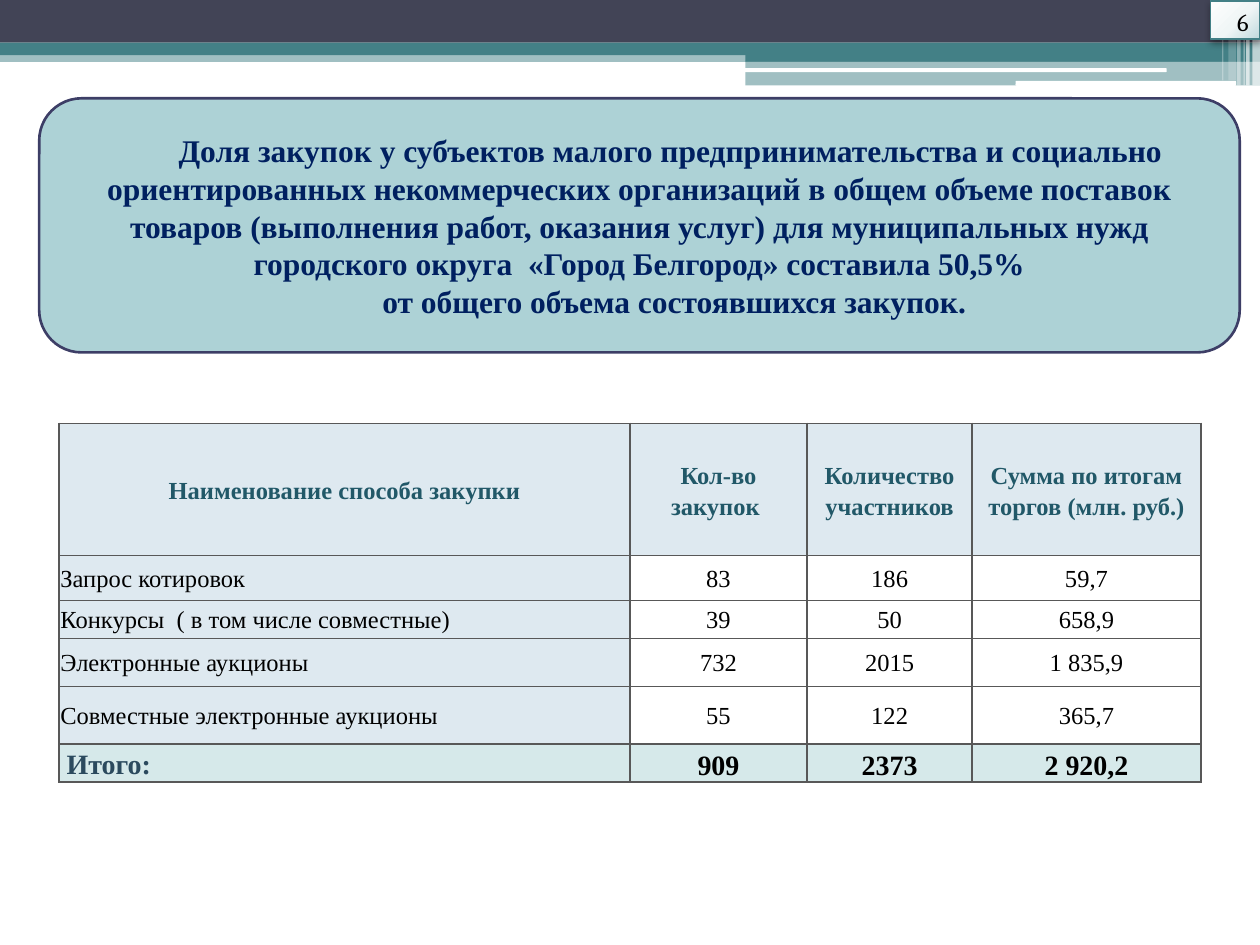
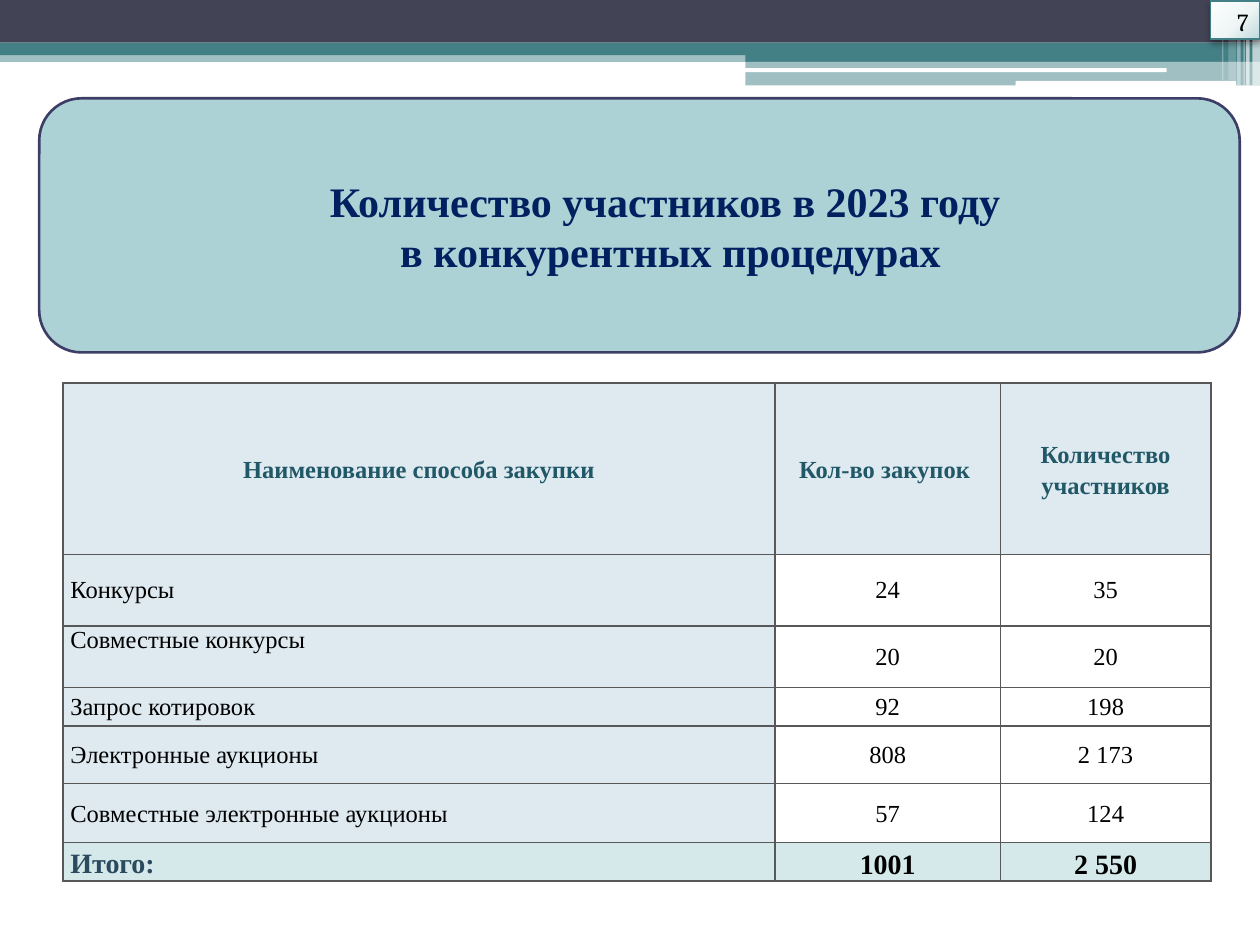
from dataclasses import dataclass, replace

from pptx import Presentation
from pptx.dml.color import RGBColor
from pptx.enum.shapes import MSO_SHAPE, PP_PLACEHOLDER
from pptx.enum.text import MSO_ANCHOR, MSO_AUTO_SIZE, PP_ALIGN
from pptx.oxml import parse_xml
from pptx.oxml.ns import nsdecls
from pptx.shapes.autoshape import Shape
from pptx.slide import Slide, SlideLayout
from pptx.table import _Cell
from pptx.text.text import _Paragraph
from pptx.util import Pt

COLOURS = {
    "dark": "424456",
    "teal": "438086",
    "white": "FFFFFF",
    "panel": "ADD2D6",
    "panel line": "3D3E66",
    "title": "002060",
    "heading": "215868",
    "total label": "2B4A5E",
    "black": "000000",
    "cell": "DEE9F0",
    "total": "D6E9EA",
    "border": "585858",
    "badge start": "FEFEFE",
    "badge middle": "F0F6F6",
    "badge end": "BFD9DD",
}
BODY_FONT = "Times New Roman"
NUMBER_FONT = "Cambria"


@dataclass(frozen=True)
class Box:
    left: float
    top: float
    width: float
    height: float

    def lengths(self) -> tuple[Pt, Pt, Pt, Pt]:
        return Pt(self.left), Pt(self.top), Pt(self.width), Pt(self.height)


@dataclass(frozen=True)
class Band:
    box: Box
    colour: str
    opacity: int = 100
    rounded: bool = False


@dataclass(frozen=True)
class CellStyle:
    colour: str = "black"
    size: float = 14
    bold: bool = False
    fill: str | None = None
    align: PP_ALIGN = PP_ALIGN.CENTER
    anchor: MSO_ANCHOR = MSO_ANCHOR.MIDDLE
    side_margin: float = 0.72
    top_margin: float = 0.72
    line_spacing: float | None = None


@dataclass(frozen=True)
class TableRow:
    height: float
    texts: tuple[str, ...]
    label_style: CellStyle
    value_style: CellStyle


@dataclass(frozen=True)
class PurchaseSlide:
    number: int
    title_lines: tuple[str, ...]
    title_size: float
    table_left: float
    table_top: float
    column_widths: tuple[float, ...]
    rows: tuple[TableRow, ...]


PANEL = Box(22.4, 56.2, 686, 145.2)
BADGE = Box(691.9, 0.5, 28.1, 21.8)

BANDS = (
    Band(Box(0, 28.8, 720, 6.6), "teal", 50),
    Band(Box(0, 0, 720, 24.4), "dark"),
    Band(Box(0, 24.4, 720, 7.2), "teal"),
    Band(Box(426, 28, 294, 7.2), "teal"),
    Band(Box(426, 34.6, 294, 14.2), "teal", 50),
    Band(Box(425.5, 39, 241.2, 2.2), "white", rounded=True),
    Band(Box(580.3, 46.2, 126, 2.8), "white", rounded=True),
    Band(Box(715.7, 0, 4.3, 48.8), "white", 65),
    Band(Box(712.1, 0, 2, 48.8), "white", 65),
    Band(Box(710.6, 0, 0.7, 48.8), "white", 60),
    Band(Box(707, 0, 2, 48.8), "white", 40),
    Band(Box(702, 0, 4.3, 46), "white", 20),
    Band(Box(698.4, 0, 0.7, 46), "white", 30),
)

HEADER = CellStyle("heading", bold=True, fill="cell", side_margin=4.3,
                   top_margin=0, line_spacing=1.15)
VALUE = CellStyle()
LABEL = CellStyle(fill="cell", align=PP_ALIGN.LEFT)
TOP_LABEL = replace(LABEL, anchor=MSO_ANCHOR.TOP)
TOTAL_LABEL = replace(HEADER, colour="total label", size=16, fill="total",
                      align=PP_ALIGN.LEFT)
TOTAL_VALUE = CellStyle(size=16, bold=True, fill="total",
                        anchor=MSO_ANCHOR.BOTTOM)


def header_row(height: float, *texts: str) -> TableRow:
    return TableRow(height, texts, HEADER, HEADER)


def body_row(height: float, *texts: str,
             label_style: CellStyle = LABEL) -> TableRow:
    return TableRow(height, texts, label_style, VALUE)


def total_row(height: float, *texts: str) -> TableRow:
    return TableRow(height, texts, TOTAL_LABEL, TOTAL_VALUE)


SLIDES = (
    PurchaseSlide(
        6,
        (
            "Доля закупок у субъектов малого предпринимательства и социально "
            "ориентированных некоммерческих организаций в общем объеме "
            "поставок товаров (выполнения работ, оказания услуг) для "
            "муниципальных нужд городского округа  «Город Белгород» "
            "составила 50,5%",
            " от общего объема состоявшихся закупок.",
        ),
        18, 33.8, 241.9, (326.2, 101.2, 94.4, 130.6),
        (
            header_row(75.6, "Наименование способа закупки", "Кол-во закупок ",
                       "Количество участников",
                       "Сумма по итогам торгов (млн. руб.)"),
            body_row(25.8, "Запрос котировок", "83", "186", "59,7"),
            body_row(21.5, "Конкурсы  ( в том числе совместные)",
                     "39", "50", "658,9"),
            body_row(27.6, "Электронные аукционы", "732", "2015", "1 835,9"),
            body_row(32.8, "Совместные электронные аукционы",
                     "55", "122", "365,7"),
            total_row(21.6, "Итого:", "909", "2373", "2 920,2"),
        ),
    ),
    PurchaseSlide(
        7,
        ("Количество участников в 2023 году ", "в конкурентных процедурах"),
        24, 36, 218.8, (406.8, 128.9, 120.2),
        (
            header_row(98, "Наименование способа закупки", "Кол-во закупок ",
                       "Количество участников"),
            body_row(40.8, " Конкурсы", "24", "35"),
            body_row(35.2, " Совместные конкурсы", "20", "20",
                     label_style=TOP_LABEL),
            body_row(22.2, " Запрос котировок", "92", "198"),
            body_row(32.9, " Электронные аукционы", "808", "2 173"),
            body_row(33.6, " Совместные электронные аукционы", "57", "124"),
            total_row(22, "Итого:", "1001", "2 550"),
        ),
    ),
)


def rgb(name: str) -> RGBColor:
    return RGBColor.from_string(COLOURS[name])


def add_run(paragraph: _Paragraph, text: str, size: float, colour: str,
            bold: bool = False, font_name: str = BODY_FONT) -> None:
    run = paragraph.add_run()
    run.text = text
    run.font.name = font_name
    run.font.size = Pt(size)
    run.font.bold = bold
    run.font.color.rgb = rgb(colour)


def add_band(slide: Slide, band: Band) -> Shape:
    kind = MSO_SHAPE.ROUNDED_RECTANGLE if band.rounded else MSO_SHAPE.RECTANGLE
    shape = slide.shapes.add_shape(kind, *band.box.lengths())
    shape.shadow.inherit = False
    shape.fill.solid()
    shape.fill.fore_color.rgb = rgb(band.colour)
    shape.line.fill.background()
    if band.opacity < 100:
        colour = shape.element.spPr.find(".//{*}solidFill/{*}srgbClr")
        colour.append(parse_xml(
            f'<a:alpha {nsdecls("a")} val="{band.opacity * 1000}"/>'))
    return shape


def furnish_layout(layout: SlideLayout, slide: Slide) -> None:
    """Draw the shared bands and title panel, then move them to the layout."""
    for placeholder in list(layout.placeholders):
        if placeholder.placeholder_format.type != PP_PLACEHOLDER.TITLE:
            layout.shapes.element.remove(placeholder.element)
    shapes = [add_band(slide, band) for band in BANDS]
    panel = add_band(slide, Band(PANEL, "panel", rounded=True))
    panel.line.color.rgb = rgb("panel line")
    panel.line.width = Pt(1.5)
    for position, shape in enumerate(shapes + [panel], start=2):
        layout.shapes.element.insert(position, shape.element)


def set_title(slide: Slide, lines: tuple[str, ...], size: float) -> None:
    title = slide.shapes.title
    title.left, title.top, title.width, title.height = PANEL.lengths()
    frame = title.text_frame
    frame.word_wrap = True
    frame.auto_size = MSO_AUTO_SIZE.NONE
    frame.vertical_anchor = MSO_ANCHOR.MIDDLE
    frame.margin_left = frame.margin_right = Pt(14.4)
    for index, line in enumerate(lines):
        paragraph = frame.add_paragraph() if index else frame.paragraphs[0]
        paragraph.alignment = PP_ALIGN.CENTER
        properties = paragraph._p.get_or_add_pPr()
        properties.set("marL", "0")
        properties.set("indent", str(Pt(35.4)))
        add_run(paragraph, line, size, "title", bold=True)


def add_number_badge(slide: Slide, number: int) -> None:
    badge = slide.shapes.add_shape(MSO_SHAPE.RECTANGLE, *BADGE.lengths())
    stops = "".join(
        f'<a:gs pos="{position * 1000}"><a:srgbClr val="{COLOURS[name]}"/></a:gs>'
        for position, name in
        ((0, "badge start"), (55, "badge middle"), (100, "badge end")))
    badge.element.spPr.insert(2, parse_xml(
        f'<a:gradFill {nsdecls("a")}><a:gsLst>{stops}</a:gsLst>'
        '<a:path path="circle"><a:fillToRect l="-40000" t="-90000" '
        'r="140000" b="190000"/></a:path></a:gradFill>'))
    badge.line.color.rgb = rgb("teal")
    badge.line.width = Pt(0.75)
    badge.shadow.inherit = False
    badge.element.spPr.find("{*}effectLst").append(parse_xml(
        f'<a:outerShdw {nsdecls("a")} blurRad="{Pt(4.1)}" dist="{Pt(2)}" '
        f'dir="5400000"><a:srgbClr val="{COLOURS["black"]}">'
        '<a:alpha val="40000"/></a:srgbClr></a:outerShdw>'))
    badge.text_frame.vertical_anchor = MSO_ANCHOR.TOP
    paragraph = badge.text_frame.paragraphs[0]
    paragraph.alignment = PP_ALIGN.CENTER
    paragraph.space_before = Pt(3)
    paragraph._p.get_or_add_pPr().set("marL", str(Pt(8.6)))
    add_run(paragraph, str(number), 14, "black", font_name=NUMBER_FONT)


def fill_cell(cell: _Cell, text: str, style: CellStyle) -> None:
    cell.vertical_anchor = style.anchor
    cell.margin_left = cell.margin_right = Pt(style.side_margin)
    cell.margin_top, cell.margin_bottom = Pt(style.top_margin), Pt(0)
    if style.fill:
        cell.fill.solid()
        cell.fill.fore_color.rgb = rgb(style.fill)
    else:
        cell.fill.background()
    for position, side in enumerate("LRTB"):
        cell._tc.get_or_add_tcPr().insert(position, parse_xml(
            f'<a:ln{side} {nsdecls("a")} w="{Pt(1)}"><a:solidFill>'
            f'<a:srgbClr val="{COLOURS["border"]}"/></a:solidFill></a:ln{side}>'))
    paragraph = cell.text_frame.paragraphs[0]
    paragraph.alignment = style.align
    paragraph.line_spacing = style.line_spacing
    add_run(paragraph, text, style.size, style.colour, style.bold)


def add_purchase_table(slide: Slide, content: PurchaseSlide) -> None:
    box = Box(content.table_left, content.table_top,
              sum(content.column_widths),
              sum(row.height for row in content.rows))
    table = slide.shapes.add_table(
        len(content.rows), len(content.column_widths), *box.lengths()).table
    table.first_row = table.horz_banding = False
    for column, width in zip(table.columns, content.column_widths):
        column.width = Pt(width)
    for row_index, row in enumerate(content.rows):
        table.rows[row_index].height = Pt(row.height)
        for column_index, text in enumerate(row.texts):
            style = row.value_style if column_index else row.label_style
            fill_cell(table.cell(row_index, column_index), text, style)


def main() -> None:
    presentation = Presentation()
    presentation.slide_width, presentation.slide_height = Pt(720), Pt(540)
    layout = presentation.slide_layouts.get_by_name("Title Only")
    for index, content in enumerate(SLIDES):
        slide = presentation.slides.add_slide(layout)
        if index == 0:
            furnish_layout(layout, slide)
        set_title(slide, content.title_lines, content.title_size)
        add_purchase_table(slide, content)
        add_number_badge(slide, content.number)
    presentation.save("out.pptx")


if __name__ == "__main__":
    main()
